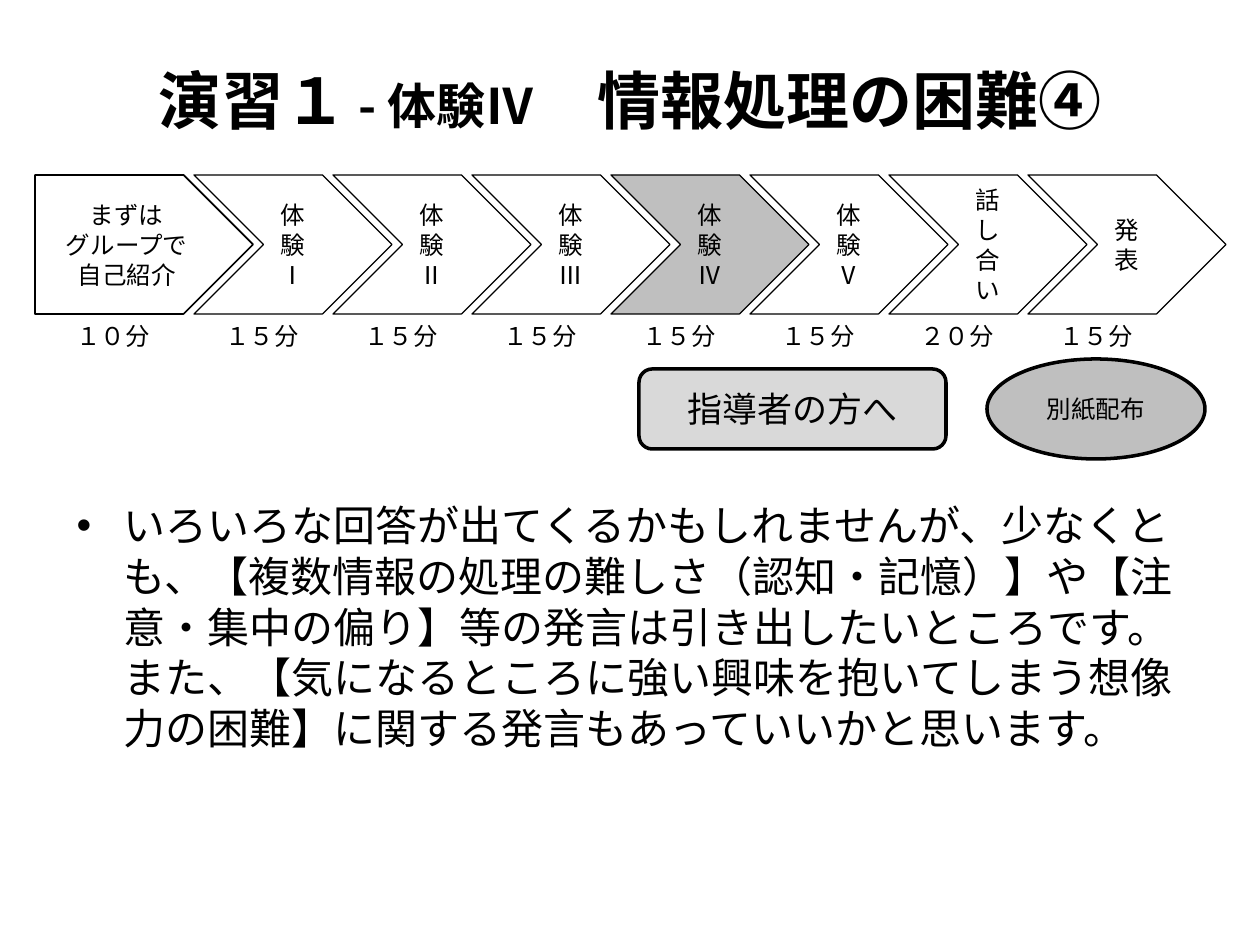
"""Build the exercise slide: title, timed process arrows, two callouts and a guidance bullet."""
import pptx
import pptx.dml.color
import pptx.enum.shapes
import pptx.enum.text
import pptx.oxml
import pptx.oxml.ns
import pptx.util

COLORS = {"black": "000000", "white": "FFFFFF", "light": "D9D9D9", "gray": "BFBFBF"}
FONT = "Noto Sans CJK JP"
PX = 914400 // 126
SHAPES = pptx.enum.shapes.MSO_SHAPE
CENTER = pptx.enum.text.PP_ALIGN.CENTER
LEFT = pptx.enum.text.PP_ALIGN.LEFT
MIDDLE = pptx.enum.text.MSO_ANCHOR.MIDDLE
TOP = pptx.enum.text.MSO_ANCHOR.TOP

TITLE = [("演習１", 36), (" - 体験Ⅳ", 28), ("　情報処理の困難④", 36)]
GUIDANCE = (
    "いろいろな回答が出てくるかもしれませんが、少なくとも、"
    "【複数情報の処理の難しさ（認知・記憶）】や【注意・集中の偏り】等の発言は引き出したいところです。"
    "また、【気になるところに強い興味を抱いてしまう想像力の困難】に関する発言もあっていいかと思います。"
)
INTRODUCTION = ["まずは", "グループで", "自己紹介"]
INTRODUCTION_TIME = "１０分"
STAGES = [
    ("体験Ⅰ", "１５分", "white"),
    ("体験Ⅱ", "１５分", None),
    ("体験Ⅲ", "１５分", None),
    ("体験Ⅳ", "１５分", "gray"),
    ("体験Ⅴ", "１５分", None),
    ("話し合い", "２０分", None),
    ("発表", "１５分", None),
]
CALLOUTS = [
    (SHAPES.ROUNDED_RECTANGLE, (639, 369, 307, 80), "指導者の方へ", 20, "light"),
    (SHAPES.OVAL, (987, 359, 218, 100), "別紙配布", 14, "gray"),
]
ARROW_TOP, ARROW_HEIGHT = 175, 139
STAGE_LEFT, STAGE_WIDTH, STAGE_STEP = 194, 198, 139
TIME_LEFT, TIME_TOP, TIME_WIDTH, TIME_HEIGHT = 213, 314, 110, 43


def emu(box):
    return [length * PX for length in box]


def rgb(name):
    return pptx.dml.color.RGBColor.from_string(COLORS[name])


def format_text(shape, size, alignment, anchor, bold=False):
    frame = shape.text_frame
    frame.word_wrap = True
    frame.auto_size = pptx.enum.text.MSO_AUTO_SIZE.NONE
    frame.vertical_anchor = anchor
    for paragraph in frame.paragraphs:
        paragraph.alignment = alignment
        paragraph.line_spacing = pptx.util.Pt(round(size * 1.2))
        font = paragraph.font
        font.name, font.size, font.bold = FONT, pptx.util.Pt(size), bold
        font.color.rgb = rgb("black")
        defaults = paragraph._p.pPr.find(pptx.oxml.ns.qn("a:defRPr"))
        east_asian = pptx.oxml.parse_xml(
            f'<a:ea {pptx.oxml.ns.nsdecls("a")} typeface="{FONT}"/>')
        defaults.find(pptx.oxml.ns.qn("a:latin")).addnext(east_asian)


def place(placeholder, box):
    placeholder.left, placeholder.top, placeholder.width, placeholder.height = emu(box)


def add_box(slide, kind, box, text, size, fill, line_width):
    shape = slide.shapes.add_shape(kind, *emu(box))
    shape.shadow.inherit = False
    if fill:
        shape.fill.solid()
        shape.fill.fore_color.rgb = rgb(fill)
    else:
        shape.fill.background()
    shape.line.color.rgb = rgb("black")
    shape.line.width = pptx.util.Pt(line_width)
    shape.text_frame.text = text
    format_text(shape, size, CENTER, MIDDLE)


def add_time(slide, left, text):
    box = slide.shapes.add_textbox(*emu((left, TIME_TOP, TIME_WIDTH, TIME_HEIGHT)))
    box.text_frame.text = text
    format_text(box, 14, LEFT, TOP)


def main():
    presentation = pptx.Presentation()
    presentation.slide_width, presentation.slide_height = emu((1260, 945))
    slide = presentation.slides.add_slide(presentation.slide_layouts[1])

    title, body = slide.placeholders
    place(title, (63, 20, 1134, 158))
    for text, size in TITLE:
        run = title.text_frame.paragraphs[0].add_run()
        run.text = text
        run.font.size = pptx.util.Pt(size)
    format_text(title, 36, CENTER, MIDDLE, bold=True)

    place(body, (64, 493, 1134, 270))
    body.text_frame.text = GUIDANCE
    format_text(body, 24, LEFT, TOP)

    add_box(slide, SHAPES.PENTAGON, (35, ARROW_TOP, 218, ARROW_HEIGHT),
            "\n".join(INTRODUCTION), 14, "white", 1)
    add_time(slide, 64, INTRODUCTION_TIME)
    for index, (name, time, fill) in enumerate(STAGES):
        offset = index * STAGE_STEP
        add_box(slide, SHAPES.CHEVRON,
                (STAGE_LEFT + offset, ARROW_TOP, STAGE_WIDTH, ARROW_HEIGHT),
                name, 14, fill, 0.75)
        add_time(slide, TIME_LEFT + offset, time)
    for kind, box, text, size, fill in CALLOUTS:
        add_box(slide, kind, box, text, size, fill, 2)

    presentation.save("out.pptx")


if __name__ == "__main__":
    main()
